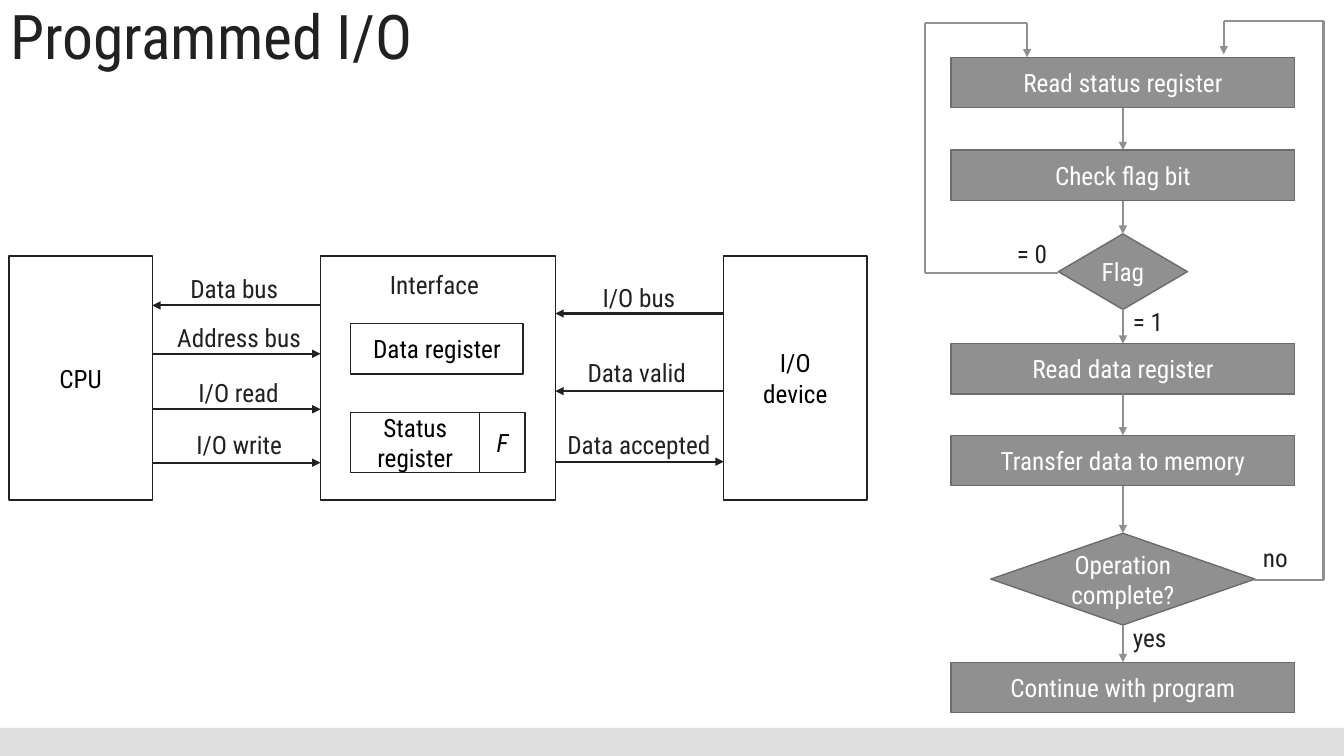
from dataclasses import dataclass
from itertools import pairwise

from lxml import etree
from pptx import Presentation
from pptx.dml.color import RGBColor
from pptx.enum.shapes import MSO_CONNECTOR, MSO_SHAPE
from pptx.enum.text import MSO_ANCHOR, MSO_AUTO_SIZE, PP_ALIGN
from pptx.oxml.ns import qn
from pptx.util import Inches, Length, Pt

RECTANGLE, DIAMOND = MSO_SHAPE.RECTANGLE, MSO_SHAPE.DIAMOND
STRAIGHT = MSO_CONNECTOR.STRAIGHT
LEFT, CENTER = PP_ALIGN.LEFT, PP_ALIGN.CENTER
TOP, MIDDLE = MSO_ANCHOR.TOP, MSO_ANCHOR.MIDDLE

FONT = "Roboto Condensed"
INK, BLACK, WHITE = "212121", "000000", "FFFFFF"
GRAY, EDGE, FOOTER = "909090", "6B6B6B", "DFDFDF"

# The slide is a grid of square cells, ten to the inch.
COLUMNS, ROWS = 133.33, 75
FLOW_CENTER = 111.4
BLOCK_TOP, BLOCK_HEIGHT = 25.4, 24.2
CPU_RIGHT, INTERFACE_LEFT, INTERFACE_RIGHT, DEVICE_LEFT = 15.1, 31.8, 55.1, 71.8


@dataclass(frozen=True)
class Block:
    lines: tuple[str, ...]
    left: float
    top: float
    width: float
    height: float
    italic: bool = False


@dataclass(frozen=True)
class Step:
    text: str
    top: float
    width: float = 34.1
    height: float = 5
    kind: MSO_SHAPE = RECTANGLE


@dataclass(frozen=True)
class Label:
    text: str
    left: float
    top: float
    width: float = 6


@dataclass(frozen=True)
class Signal:
    start: float
    end: float
    row: float
    label: Label


BLOCKS = [
    Block(("CPU",), 0.9, BLOCK_TOP, 14.2, BLOCK_HEIGHT),
    Block((), INTERFACE_LEFT, BLOCK_TOP, 23.3, BLOCK_HEIGHT),
    Block(("Data register",), 34.8, 32.1, 17.1, 5),
    Block(("Status register",), 34.8, 40.9, 12.8, 6),
    Block(("F",), 47.6, 40.9, 4.5, 6, italic=True),
    Block(("I/O", "device"), DEVICE_LEFT, BLOCK_TOP, 14.2, BLOCK_HEIGHT),
]
SIGNALS = [
    Signal(INTERFACE_LEFT, CPU_RIGHT, 30.3, Label("Data bus", 17.9, 26.6, 11.7)),
    Signal(CPU_RIGHT, INTERFACE_LEFT, 35.1, Label("Address bus", 16.6, 31.5, 15.5)),
    Signal(CPU_RIGHT, INTERFACE_LEFT, 40.6, Label("I/O read", 18.7, 36.9, 10.6)),
    Signal(CPU_RIGHT, INTERFACE_LEFT, 45.9, Label("I/O write", 18.5, 42.1, 11.7)),
    Signal(DEVICE_LEFT, INTERFACE_RIGHT, 31.1, Label("I/O bus", 58.8, 27.5, 9.6)),
    Signal(DEVICE_LEFT, INTERFACE_RIGHT, 38.8, Label("Data valid", 57.3, 35, 12.8)),
    Signal(INTERFACE_RIGHT, DEVICE_LEFT, 45.8, Label("Data accepted", 55.3, 42.1, 17.1)),
]
STEPS = [
    Step("Read status register", 5.7),
    Step("Check flag bit", 14.9),
    Step("Flag", 23.2, 12.8, 7.5, DIAMOND),
    Step("Read data register", 34.1),
    Step("Transfer data to memory", 43.2),
    Step("Operation complete?", 52.9, 26.2, 9.1, DIAMOND),
    Step("Continue with program", 65.7),
]
LABELS = [
    Label("Interface", 37.7, 26.2, 11.3),
    Label("= 0", 99.9, 23.2),
    Label("= 1", FLOW_CENTER, 29.9),
    Label("yes", FLOW_CENTER, 61.2),
    Label("no", 124.3, 53.3),
]
LOOPS = [
    [(105, 27.1), (91.8, 27.1), (91.8, 2.3), (101.9, 2.3), (101.9, 5.7)],
    [(124.4, 57.5), (131.3, 57.5), (131.3, 2.1), (121.4, 2.1), (121.4, 5.4)],
]


def cells(*counts: float) -> list[Length]:
    return [Inches(count / 10) for count in counts]


def color(value: str) -> RGBColor:
    return RGBColor.from_string(value)


def write(frame, lines, ink, size=18, align=CENTER, anchor=MIDDLE, italic=False) -> None:
    frame.word_wrap = True
    frame.vertical_anchor = anchor
    for index, line in enumerate(lines):
        para = frame.add_paragraph() if index else frame.paragraphs[0]
        para.alignment = align
        span = para.add_run()
        span.text = line
        font = span.font
        font.name, font.size, font.italic = FONT, Pt(size), italic
        font.color.rgb = color(ink)


def add_box(page, kind, left, top, width, height, fill=None, edge=None):
    box = page.shapes.add_shape(kind, *cells(left, top, width, height))
    box.shadow.inherit = False
    if fill:
        box.fill.solid()
        box.fill.fore_color.rgb = color(fill)
    else:
        box.fill.background()
    if edge:
        box.line.color.rgb = color(edge)
        box.line.width = Pt(1)
    else:
        box.line.fill.background()
    return box


def add_path(page, points: list[tuple[float, float]], ink: str) -> None:
    """Join the points with straight lines and put an arrowhead on the last."""
    for start, end in pairwise(points):
        line = page.shapes.add_connector(STRAIGHT, *cells(*start, *end))
        line.line.color.rgb = color(ink)
        line.line.width = Pt(1.5)
        properties = line._element.spPr
        etree.SubElement(properties, qn("a:effectLst"))
    etree.SubElement(properties.find(qn("a:ln")), qn("a:tailEnd"), type="triangle")


def add_label(page, label: Label) -> None:
    box = page.shapes.add_textbox(*cells(label.left, label.top, label.width, 4))
    write(box.text_frame, [label.text], INK, align=LEFT, anchor=TOP)


def add_title(page, text: str) -> None:
    title = page.shapes.title
    title.left, title.top, title.width, title.height = cells(0, 0, 47.7, 7.8)
    write(title.text_frame, [text], INK, size=44, align=LEFT)
    title.text_frame.auto_size = MSO_AUTO_SIZE.NONE
    title.text_frame.paragraphs[0].line_spacing = 0.9


def add_interface_diagram(page) -> None:
    for block in BLOCKS:
        box = add_box(page, RECTANGLE, block.left, block.top, block.width, block.height, edge=INK)
        write(box.text_frame, block.lines, BLACK, italic=block.italic)
    for signal in SIGNALS:
        add_path(page, [(signal.start, signal.row), (signal.end, signal.row)], INK)
        add_label(page, signal.label)


def add_flowchart(page) -> None:
    for step in STEPS:
        left = FLOW_CENTER - step.width / 2
        box = add_box(page, step.kind, left, step.top, step.width, step.height, GRAY, EDGE)
        frame = box.text_frame
        frame.margin_left = frame.margin_right = 0
        write(frame, [step.text], WHITE)
    for above, below in pairwise(STEPS):
        bottom = above.top + above.height
        add_path(page, [(FLOW_CENTER, bottom), (FLOW_CENTER, below.top)], GRAY)
    for loop in LOOPS:
        add_path(page, loop, GRAY)


def main() -> None:
    deck = Presentation()
    deck.slide_width, deck.slide_height = cells(COLUMNS, ROWS)
    page = deck.slides.add_slide(deck.slide_layouts.get_by_name("Title Only"))
    add_box(page, RECTANGLE, 0, 72.2, COLUMNS, 2.8, fill=FOOTER)
    add_title(page, "Programmed I/O")
    add_interface_diagram(page)
    add_flowchart(page)
    for label in LABELS:
        add_label(page, label)
    deck.save("out.pptx")


if __name__ == "__main__":
    main()
